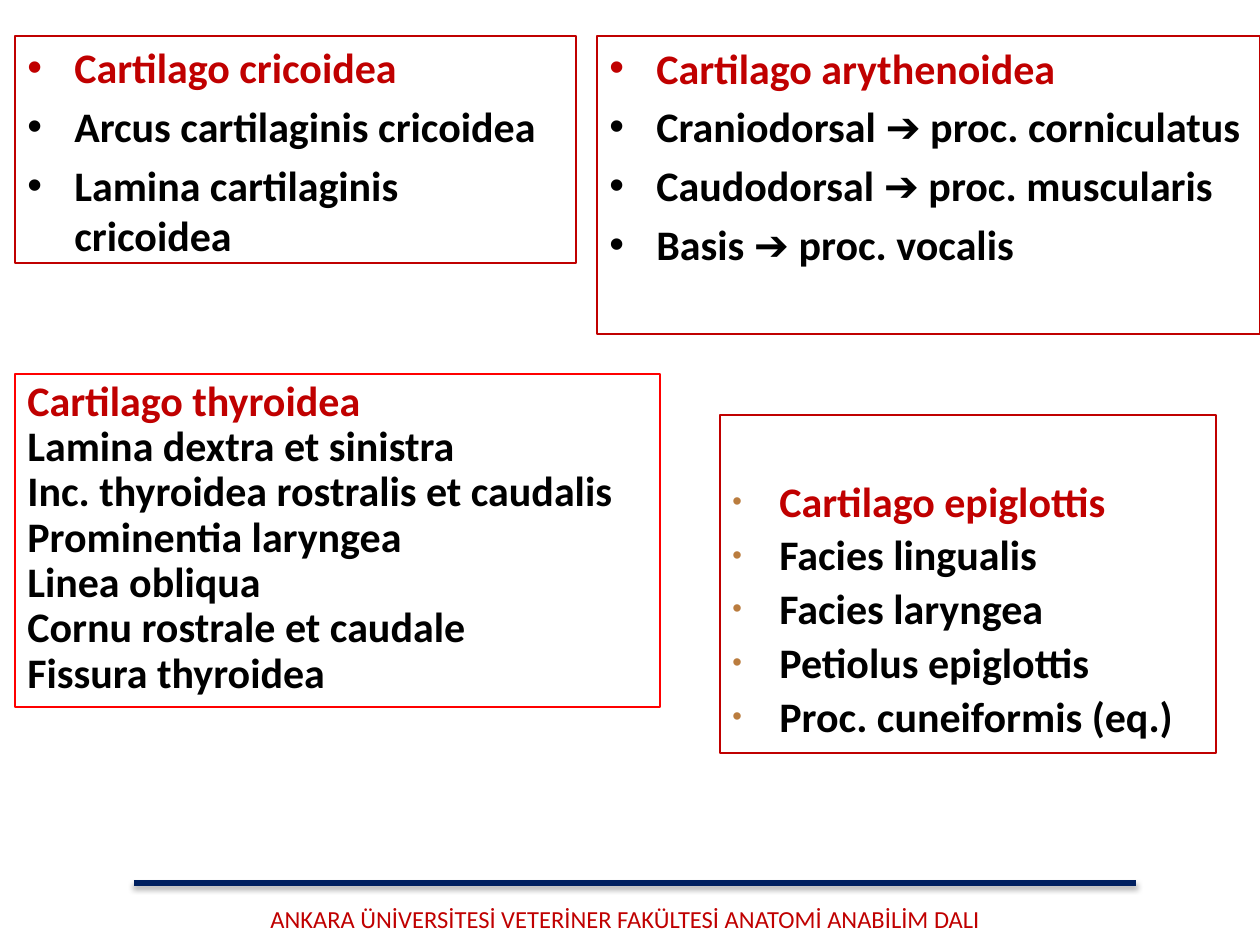
from dataclasses import dataclass

from lxml import etree
from pptx import Presentation
from pptx import util as u
from pptx.dml.color import RGBColor
from pptx.enum import shapes, text
from pptx.oxml import ns

PX = u.Inches(1) / 126
RED, BLACK, NAVY = "C00000", "000000", "002060"


@dataclass
class Card:
    """A framed list with a red heading, measured in px."""
    left: int
    top: int
    width: int
    height: int
    heading: str
    items: list[str]
    border: str = RED
    bulleted: bool = True
    bullet_color: str = ""
    bullet_size: int = 100
    spacing: float = 1.0
    inset_top: int = 6


CARDS = [
    Card(15, 36, 561, 227, "Cartilago cricoidea",
         ["Arcus cartilaginis cricoidea", "Lamina cartilaginis cricoidea"]),
    Card(597, 36, 663, 298, "Cartilago arythenoidea",
         ["Craniodorsal ➔ proc. corniculatus", "Caudodorsal ➔ proc. muscularis",
          "Basis ➔ proc. vocalis"]),
    Card(15, 374, 645, 333, "Cartilago thyroidea",
         ["Lamina dextra et sinistra", "Inc. thyroidea rostralis et caudalis",
          "Prominentia laryngea", "Linea obliqua", "Cornu rostrale et caudale",
          "Fissura thyroidea"],
         border="FF0000", bulleted=False, spacing=0.9),
    Card(720, 415, 496, 338, "Cartilago epiglottis",
         ["Facies lingualis", "Facies laryngea", "Petiolus epiglottis",
          "Proc. cuneiformis (eq.)"],
         bullet_color="BA7C3E", bullet_size=65, spacing=0.9, inset_top=66),
]


def px(length: int) -> u.Emu:
    return u.Emu(round(length * PX))


def rgb(color: str) -> RGBColor:
    return RGBColor.from_string(color)


def add_xml(parent, tag: str, **attributes):
    return etree.SubElement(parent, ns.qn(tag), attributes)


def write(paragraph, words: str, *, size: int = 24, color: str = BLACK,
          bold: bool = False, align=text.PP_ALIGN.LEFT, spacing: float = 1.0,
          before: float = 0) -> None:
    paragraph.alignment = align
    paragraph.line_spacing = spacing
    paragraph.space_before = u.Pt(before)
    run = paragraph.add_run()
    run.text = words
    run.font.name, run.font.size, run.font.bold = "Calibri", u.Pt(size), bold
    run.font.color.rgb = rgb(color)


def add_bullet(paragraph, color: str, size: int) -> None:
    properties = paragraph._p.get_or_add_pPr()
    properties.set("marL", str(px(47)))
    properties.set("indent", str(-px(47)))
    if color:
        add_xml(add_xml(properties, "a:buClr"), "a:srgbClr", val=color)
    add_xml(properties, "a:buSzPct", val=str(size * 1000))
    add_xml(properties, "a:buFont", typeface="Arial")
    add_xml(properties, "a:buChar", char="•")


def draw_card(slide, card: Card) -> None:
    panel = slide.shapes.add_shape(
        shapes.MSO_SHAPE.RECTANGLE, px(card.left), px(card.top), px(card.width), px(card.height))
    panel.shadow.inherit = False
    panel.fill.background()
    panel.line.color.rgb = rgb(card.border)
    panel.line.width = u.Pt(0.75)
    frame = panel.text_frame
    frame.word_wrap = True
    frame.vertical_anchor = text.MSO_ANCHOR.TOP
    frame.margin_top = px(card.inset_top)
    for index, words in enumerate([card.heading, *card.items]):
        entry = frame.add_paragraph() if index else frame.paragraphs[0]
        if card.bulleted:
            add_bullet(entry, card.bullet_color, card.bullet_size)
        write(entry, words, bold=True, color=BLACK if index else RED, spacing=card.spacing,
              before=4.8 if index and card.bulleted else 0)


def draw_footer(slide) -> None:
    rule = slide.shapes.add_connector(
        shapes.MSO_CONNECTOR.STRAIGHT, px(134), px(883), px(1136), px(883))
    rule.line.color.rgb = rgb(NAVY)
    rule.line.width = u.Pt(3)
    effects = add_xml(rule._element.spPr, "a:effectLst")
    shadow = add_xml(effects, "a:outerShdw", blurRad=str(u.Pt(3.1)), dist=str(u.Pt(1.8)),
                     dir="5400000", rotWithShape="0")
    add_xml(add_xml(shadow, "a:srgbClr", val=BLACK), "a:alpha", val="35000")
    department = slide.shapes.add_textbox(px(184), px(898), px(883), px(43)).text_frame
    department.word_wrap = True
    write(department.paragraphs[0],
          "ANKARA ÜNİVERSİTESİ VETERİNER FAKÜLTESİ ANATOMİ ANABİLİM DALI",
          size=14, color=RED, align=text.PP_ALIGN.CENTER)


def main() -> None:
    """Build the slide on the laryngeal cartilages."""
    deck = Presentation()
    deck.slide_width, deck.slide_height = px(1260), px(945)
    slide = deck.slides.add_slide(deck.slide_layouts[6])
    draw_footer(slide)
    for card in CARDS:
        draw_card(slide, card)
    deck.save("out.pptx")


if __name__ == "__main__":
    main()
